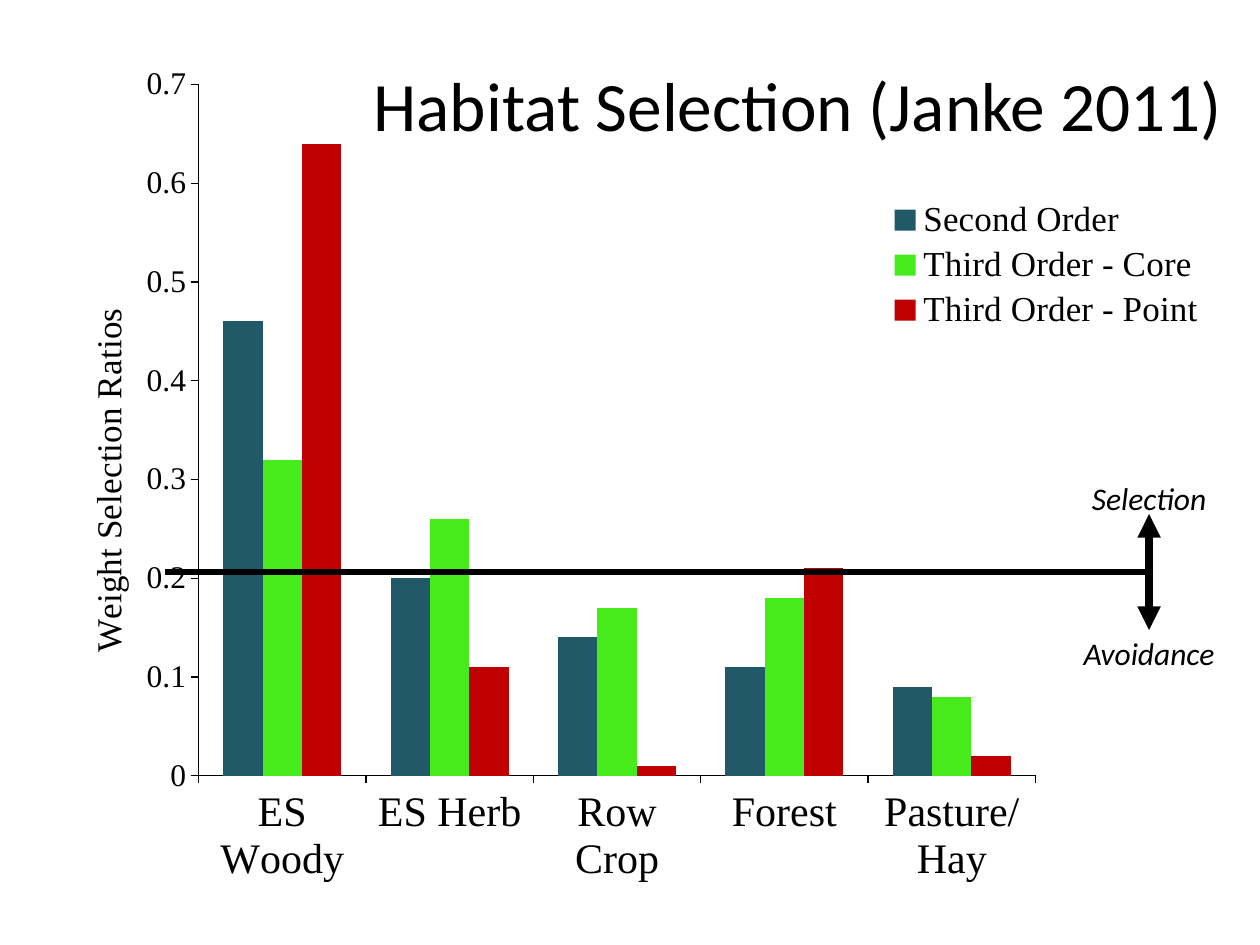
from dataclasses import dataclass

from pptx import Presentation
from pptx.chart.data import CategoryChartData
from pptx.dml.color import RGBColor
from pptx.enum.chart import XL_CHART_TYPE as ChartType, XL_LEGEND_POSITION as LegendPosition
from pptx.enum.chart import XL_TICK_MARK as TickMark
from pptx.enum.shapes import MSO_CONNECTOR as Connector
from pptx.enum.text import MSO_ANCHOR as Anchor, PP_ALIGN as Align
from pptx.oxml.ns import qn
from pptx.oxml.xmlchemy import OxmlElement
from pptx.util import Inches, Pt


@dataclass(frozen=True)
class Theme:
    ink: str = "000000"
    series: tuple = ("215968", "47EA1A", "C00000")
    sans: str = "Calibri"
    serif: str = "Times New Roman"
    title: float = 39.6
    category: float = 24
    legend: float = 20
    body: float = 18


THEME = Theme()
CATEGORIES = ["ES Woody", "ES Herb", "Row Crop", "Forest", "Pasture/ Hay"]
SERIES = {
    "Second Order": (0.46, 0.2, 0.14, 0.11, 0.09),
    "Third Order - Core": (0.32, 0.26, 0.17, 0.18, 0.08),
    "Third Order - Point": (0.64, 0.11, 0.01, 0.21, 0.02),
}


def color(code):
    return RGBColor.from_string(code)


def style_font(font, size, name, italic=False):
    font.size, font.name = Pt(size), name
    font.bold, font.italic = False, italic
    font.color.rgb = color(THEME.ink)


def set_layout(parent, inner=False, **shares):
    """Place a chart part by shares of the chart's size."""
    for old in parent.findall(qn("c:layout")):
        parent.remove(old)
    layout, manual = OxmlElement("c:layout"), OxmlElement("c:manualLayout")
    layout.append(manual)
    settings = {"layoutTarget": "inner"} if inner else {}
    settings.update(xMode="edge", yMode="edge", **shares)
    for tag, value in settings.items():
        element = OxmlElement(f"c:{tag}")
        element.set("val", str(value))
        manual.append(element)
    leading = (qn("c:tx"), qn("c:legendPos"))
    parent.insert(sum(child.tag in leading for child in parent), layout)


def add_ratio_chart(slide, left, top, width, height):
    data = CategoryChartData()
    data.categories = CATEGORIES
    for name, values in SERIES.items():
        data.add_series(name, values)
    chart = slide.shapes.add_chart(
        ChartType.COLUMN_CLUSTERED, Inches(left), Inches(top), Inches(width), Inches(height), data
    ).chart
    style_font(chart.font, THEME.body, THEME.sans)
    chart.has_title = False

    # Columns
    plot = chart.plots[0]
    plot.gap_width, plot.overlap, plot.vary_by_categories = 125, 0, False
    for series, fill in zip(plot.series, THEME.series):
        series.format.fill.solid()
        series.format.fill.fore_color.rgb = color(fill)
    set_layout(chart._chartSpace.chart.plotArea, inner=True, x=0.114, y=0.04, w=0.618, h=0.813)

    # Axes
    for axis, size in ((chart.category_axis, THEME.category), (chart.value_axis, THEME.body)):
        style_font(axis.tick_labels.font, size, THEME.serif)
        axis.has_major_gridlines = False
        axis.major_tick_mark = TickMark.OUTSIDE
        axis.format.line.color.rgb = color(THEME.ink)
        axis.format.line.width = Pt(0.75)
    values = chart.value_axis
    values.minimum_scale, values.maximum_scale, values.major_unit = 0, 0.7, 0.1
    values.tick_labels.number_format = "General"
    values.tick_labels.number_format_is_linked = False
    title = values.axis_title
    title.text_frame.text = "Weight Selection Ratios"
    style_font(title.text_frame.paragraphs[0].runs[0].font, THEME.legend, THEME.serif)
    set_layout(title._element, x=0.026, y=0.296)

    # Legend
    chart.has_legend = True
    legend = chart.legend
    legend.position, legend.include_in_layout = LegendPosition.RIGHT, False
    style_font(legend.font, THEME.legend, THEME.serif)
    set_layout(legend._element, x=0.615, y=0.17, w=0.25, h=0.165)


def add_line(slide, start, end, weight, arrows=False):
    line = slide.shapes.add_connector(Connector.STRAIGHT, *map(Inches, start + end))
    line.line.color.rgb = color(THEME.ink)
    line.line.width = Pt(weight)
    if arrows:
        for tag in ("a:headEnd", "a:tailEnd"):
            arrow = OxmlElement(tag)
            arrow.set("type", "triangle")
            line.line._get_or_add_ln().append(arrow)
    line._element.spPr.append(OxmlElement("a:effectLst"))


def add_label(slide, text, left, top, width, height, size, italic=False):
    frame = slide.shapes.add_textbox(*map(Inches, (left, top, width, height))).text_frame
    frame.word_wrap, frame.vertical_anchor = True, Anchor.MIDDLE
    frame.text = text
    paragraph = frame.paragraphs[0]
    paragraph.alignment = Align.CENTER
    style_font(paragraph.runs[0].font, size, THEME.sans, italic)


def add_threshold(slide, left, top, width, height):
    """Draw the neutral line with its selection and avoidance arrow."""
    right, middle = left + width, top + height / 2
    add_line(slide, (left, middle), (right, middle), 3)
    add_line(slide, (right, top), (right, top + height), 4.5, arrows=True)
    label_width, label_height = 2.4, 0.4
    for text, label_top in (("Selection", top - 0.33), ("Avoidance", top + height - 0.02)):
        add_label(slide, text, right - label_width / 2, label_top,
                  label_width, label_height, THEME.body, italic=True)


def main():
    presentation = Presentation()
    presentation.slide_width, presentation.slide_height = Inches(10), Inches(7.5)
    slide = presentation.slides.add_slide(presentation.slide_layouts[6])
    add_ratio_chart(slide, 0.35, 0.4, 10.75, 6.75)
    add_threshold(slide, 1.31, 4.08, 7.81, 0.92)
    add_label(slide, "Habitat Selection (Janke 2011)", 2.75, 0.47, 7.17, 0.7, THEME.title)
    presentation.save("out.pptx")


if __name__ == "__main__":
    main()
